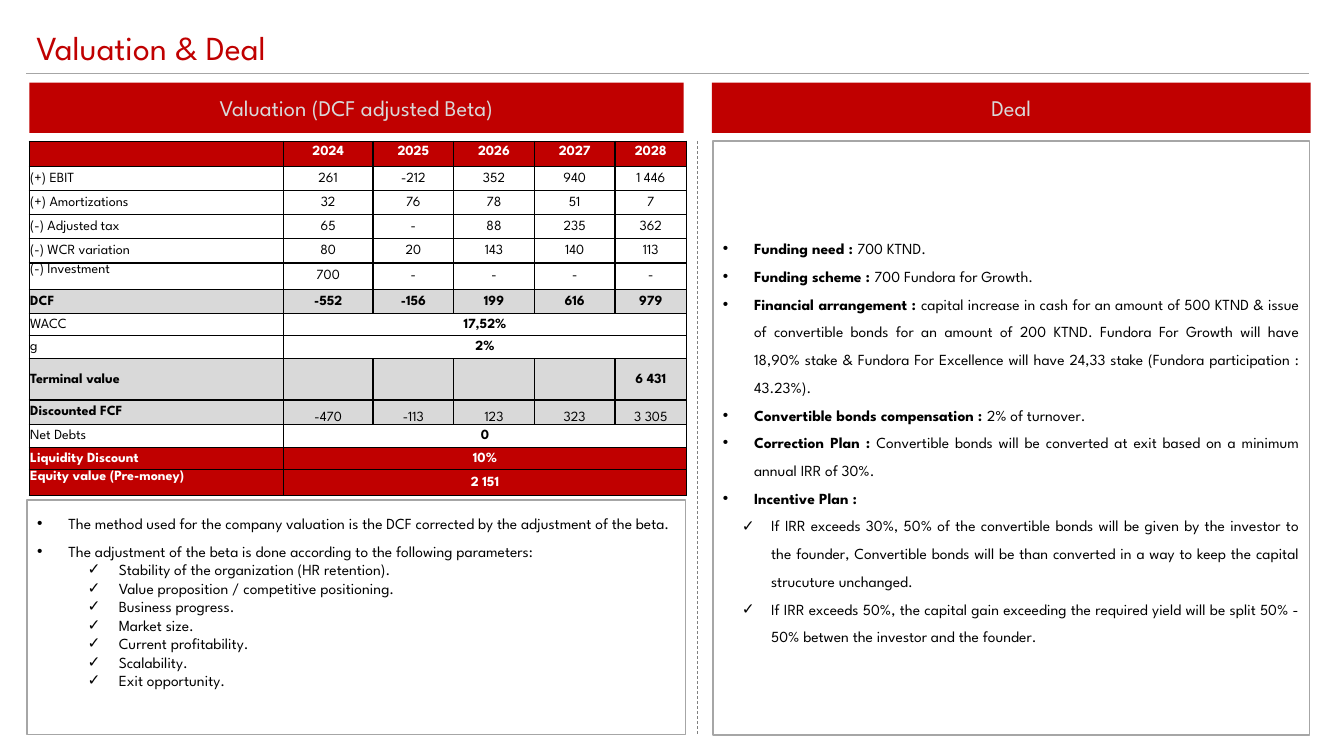
import dataclasses

import lxml.etree
import pptx
import pptx.dml.color
import pptx.enum.dml
import pptx.enum.shapes
import pptx.enum.text
import pptx.oxml.ns
import pptx.util

ALIGN = pptx.enum.text.PP_ALIGN
ANCHOR = pptx.enum.text.MSO_ANCHOR
EMU_PER_PX = 9144


@dataclasses.dataclass(frozen=True)
class Theme:
    font: str = "League Spartan"
    red: str = "C00000"
    light: str = "D9D9D9"
    rule: str = "A6A6A6"
    divider: str = "808080"
    black: str = "000000"
    white: str = "FFFFFF"
    title: int = 24
    banner: int = 16
    body: int = 11
    cell: int = 10


THEME = Theme()

COLUMN_WIDTHS = [252, 89, 80, 80, 80, 71]
VALUATION_ROWS = [
    ("header", 25, ["", "2024", "2025", "2026", "2027", "2028"]),
    ("plain", 24, ["(+) EBIT", "261", "-212", "352", "940", "1 446"]),
    ("plain", 24, ["(+) Amortizations", "32", "76", "78", "51", "7"]),
    ("plain", 24, ["(-) Adjusted tax", "65", "-", "88", "235", "362"]),
    ("plain", 24, ["(-) WCR variation", "80", "20", "143", "140", "113"]),
    ("plain", 26, ["(-) Investment", "700", "-", "-", "-", "-"]),
    ("total", 24, ["DCF", "-552", "-156", "199", "616", "979"]),
    ("rate", 22, ["WACC", "17,52%"]),
    ("rate", 23, ["g", "2%"]),
    ("total", 41, ["Terminal value", "", "", "", "", "6 431"]),
    ("discounted", 24, ["Discounted FCF", "-470", "-113", "123", "323", "3 305"]),
    ("rate", 23, ["Net Debts", "0"]),
    ("result", 22, ["Liquidity Discount", "10%"]),
    ("result", 26, ["Equity value (Pre-money)", "2 151"]),
]
TOP_LABELS = {"(-) Investment", "Equity value (Pre-money)"}
ROW_STYLES = {
    "header": (THEME.red, THEME.white, True, True),
    "plain": (None, THEME.black, False, False),
    "total": (THEME.light, THEME.black, True, True),
    "rate": (None, THEME.black, False, True),
    "discounted": (THEME.light, THEME.black, True, False),
    "result": (THEME.red, THEME.white, True, True),
}

POINT = ("•", 31, -31, 1.5)
PARAMETER = ("✓", 81, -31, 1.0)
INCENTIVE = ("✓", 48, -29, 1.5)
METHOD_NOTES = [
    (POINT, "", "The method used for the company valuation is the DCF corrected by the adjustment of the beta."),
    (POINT, "", "The adjustment of the beta is done according to the following parameters:"),
] + [(PARAMETER, "", text) for text in (
    "Stability of the organization (HR retention).",
    "Value proposition / competitive positioning.",
    "Business progress.",
    "Market size.",
    "Current profitability.",
    "Scalability.",
    "Exit opportunity.",
)]
DEAL_NOTES = [
    (POINT, "Funding need : ", "700 KTND."),
    (POINT, "Funding scheme : ", "700 Fundora for Growth."),
    (POINT, "Financial arrangement : ",
     "capital increase in cash for an amount of 500 KTND & issue of convertible bonds for an amount "
     "of 200 KTND. Fundora For Growth will have 18,90% stake & Fundora For Excellence will have "
     "24,33 stake (Fundora participation : 43.23%)."),
    (POINT, "Convertible bonds compensation : ", "2% of turnover."),
    (POINT, "Correction Plan :",
     " Convertible bonds will be converted at exit based on a minimum annual IRR of 30%."),
    (POINT, "Incentive Plan :", ""),
    (INCENTIVE, "", "If IRR exceeds 30%, 50% of the convertible bonds will be given by the investor to the "
     "founder, Convertible bonds will be than converted in a way to keep the capital strucuture unchanged."),
    (INCENTIVE, "", "If IRR exceeds 50%, the capital gain exceeding the required yield will be split "
     "50% - 50% betwen the investor and the founder."),
]


def px(length):
    return pptx.util.Emu(length * EMU_PER_PX)


def rgb(color):
    return pptx.dml.color.RGBColor.from_string(color)


def add_xml(parent, tag, **attributes):
    return lxml.etree.SubElement(parent, pptx.oxml.ns.qn(tag), **attributes)


def add_run(paragraph, text, size, color, bold=False):
    run = paragraph.add_run()
    run.text = text
    run.font.name = THEME.font
    run.font.size = pptx.util.Pt(size)
    run.font.bold = bold
    run.font.color.rgb = rgb(color)


def add_title(slide, box, text):
    title = slide.shapes.title
    title.left, title.top, title.width, title.height = map(px, box)
    title.text_frame.vertical_anchor = ANCHOR.MIDDLE
    paragraph = title.text_frame.paragraphs[0]
    paragraph.alignment = ALIGN.LEFT
    paragraph.line_spacing = 0.8
    add_run(paragraph, text, THEME.title, THEME.red)


def add_rule(slide, start, end, color, dashed=False):
    line = slide.shapes.add_connector(
        pptx.enum.shapes.MSO_CONNECTOR.STRAIGHT, *map(px, start + end))
    line.line.color.rgb = rgb(color)
    line.line.width = pptx.util.Pt(0.5)
    if dashed:
        line.line.dash_style = pptx.enum.dml.MSO_LINE.DASH
    add_xml(line._element.spPr, "a:effectLst")


def add_rectangle(slide, box, anchor):
    shape = slide.shapes.add_shape(pptx.enum.shapes.MSO_SHAPE.RECTANGLE, *map(px, box))
    shape.shadow.inherit = False
    shape.text_frame.word_wrap = True
    shape.text_frame.vertical_anchor = anchor
    return shape


def add_banner(slide, box, text):
    banner = add_rectangle(slide, box, ANCHOR.MIDDLE)
    banner.fill.solid()
    banner.fill.fore_color.rgb = rgb(THEME.red)
    banner.line.fill.background()
    paragraph = banner.text_frame.paragraphs[0]
    paragraph.alignment = ALIGN.CENTER
    add_run(paragraph, text, THEME.banner, THEME.light)


def add_notes_panel(slide, box, notes, anchor):
    panel = add_rectangle(slide, box, anchor)
    panel.fill.background()
    panel.line.color.rgb = rgb(THEME.rule)
    panel.line.width = pptx.util.Pt(1)
    frame = panel.text_frame
    for index, ((bullet, margin, indent, spacing), lead, text) in enumerate(notes):
        paragraph = frame.add_paragraph() if index else frame.paragraphs[0]
        paragraph.alignment = ALIGN.JUSTIFY
        paragraph.line_spacing = spacing
        properties = paragraph._p.get_or_add_pPr()
        properties.set("marL", str(px(margin)))
        properties.set("indent", str(px(indent)))
        add_xml(properties, "a:buFont", typeface="Arial")
        add_xml(properties, "a:buChar", char=bullet)
        for part, bold in ((lead, True), (text, False)):
            if part:
                add_run(paragraph, part, THEME.body, THEME.black, bold)


def format_cell(cell, fill, bottom_margin):
    cell.margin_left = cell.margin_right = cell.margin_top = px(1)
    cell.margin_bottom = px(bottom_margin)
    properties = cell._tc.get_or_add_tcPr()
    for side in ("a:lnL", "a:lnR", "a:lnT", "a:lnB"):
        border = add_xml(properties, side, w=str(pptx.util.Pt(1)))
        add_xml(add_xml(border, "a:solidFill"), "a:srgbClr", val=THEME.black)
    if fill:
        cell.fill.solid()
        cell.fill.fore_color.rgb = rgb(fill)
    else:
        cell.fill.background()


def add_valuation_table(slide, left, top):
    heights = [height for _, height, _ in VALUATION_ROWS]
    box = (left, top, sum(COLUMN_WIDTHS), sum(heights))
    table = slide.shapes.add_table(len(heights), len(COLUMN_WIDTHS), *map(px, box)).table
    table.first_row = table.horz_banding = False
    for column, width in zip(table.columns, COLUMN_WIDTHS):
        column.width = px(width)
    for row_index, (kind, height, texts) in enumerate(VALUATION_ROWS):
        table.rows[row_index].height = px(height)
        fill, color, label_bold, value_bold = ROW_STYLES[kind]
        for column_index in range(len(COLUMN_WIDTHS)):
            cell = table.cell(row_index, column_index)
            format_cell(cell, fill, 5 if kind == "header" else 0)
            text = texts[column_index] if column_index < len(texts) else ""
            is_label = column_index == 0
            cell.vertical_anchor = ANCHOR.MIDDLE
            if text in TOP_LABELS:
                cell.vertical_anchor = ANCHOR.TOP
            elif kind == "discounted" and not is_label:
                cell.vertical_anchor = ANCHOR.BOTTOM
            paragraph = cell.text_frame.paragraphs[0]
            paragraph.alignment = ALIGN.LEFT if is_label else ALIGN.CENTER
            if text:
                add_run(paragraph, text, THEME.cell, color, label_bold if is_label else value_bold)
            else:
                add_xml(paragraph._p, "a:endParaRPr", sz=str(THEME.cell * 100))
        if len(texts) == 2:
            table.cell(row_index, 1).merge(table.cell(row_index, len(COLUMN_WIDTHS) - 1))


def main():
    presentation = pptx.Presentation()
    presentation.slide_width, presentation.slide_height = px(1333), px(750)
    slide = presentation.slides.add_slide(presentation.slide_layouts.get_by_name("Title Only"))
    add_title(slide, (26, 28, 1150, 44), "Valuation & Deal")
    add_rule(slide, (26, 73), (1298, 73), THEME.rule)
    add_banner(slide, (29, 82, 649, 50), "Valuation (DCF adjusted Beta)")
    add_banner(slide, (706, 82, 594, 50), "Deal")
    add_rule(slide, (692, 140), (692, 729), THEME.divider, dashed=True)
    add_valuation_table(slide, 29, 140)
    add_notes_panel(slide, (27, 496, 653, 233), METHOD_NOTES, ANCHOR.TOP)
    add_notes_panel(slide, (707, 140, 592, 589), DEAL_NOTES, ANCHOR.MIDDLE)
    presentation.save("out.pptx")


if __name__ == "__main__":
    main()
